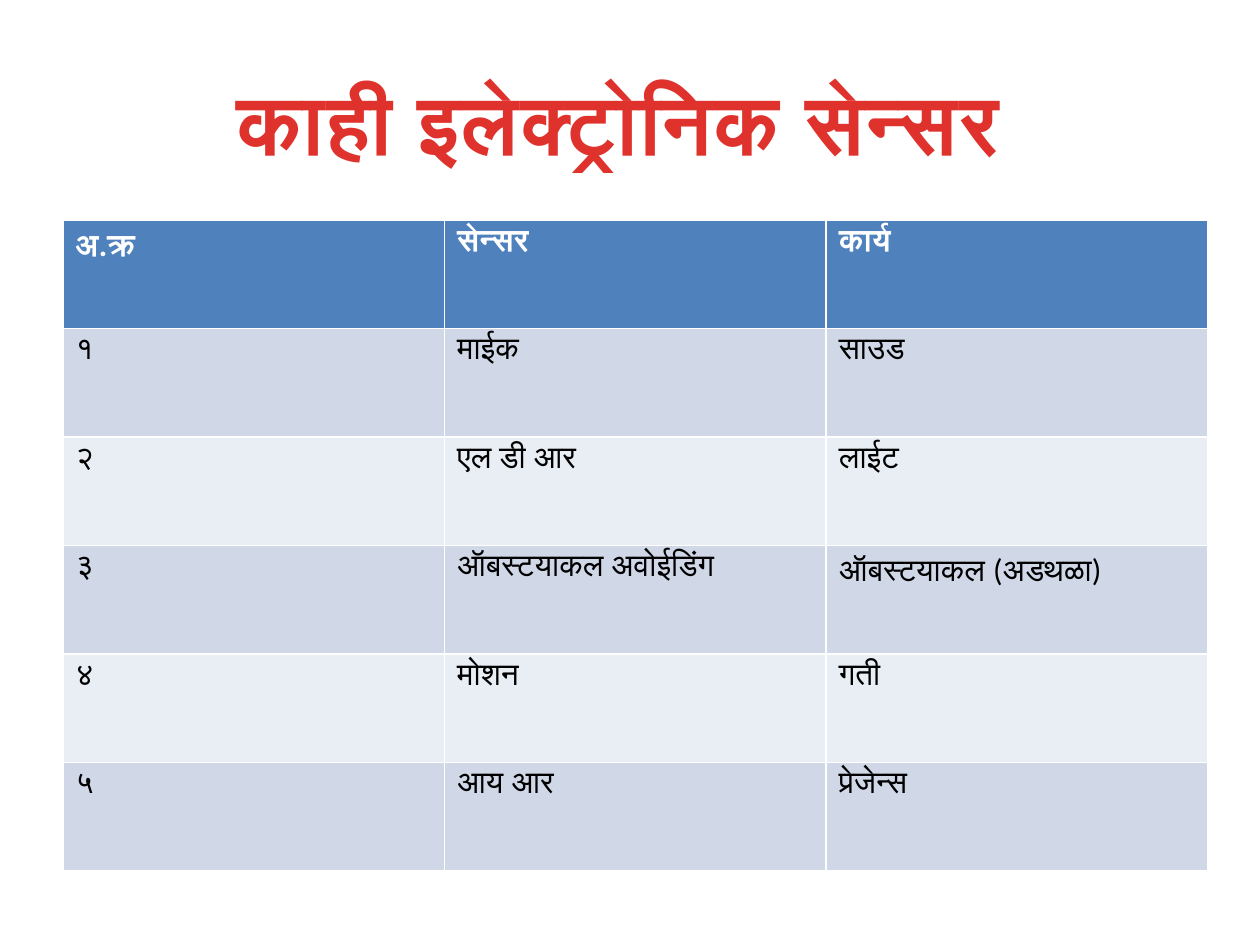
from pptx import Presentation
from pptx.dml.color import RGBColor
from pptx.enum.text import MSO_ANCHOR, PP_ALIGN
from pptx.util import Pt

SCALE = 914400 / 126
MIDDLE = MSO_ANCHOR.MIDDLE
CENTER = PP_ALIGN.CENTER

RED = RGBColor(0xE0, 0x32, 0x2D)
WHITE = RGBColor(0xFF, 0xFF, 0xFF)
BLACK = RGBColor(0x00, 0x00, 0x00)
BLUE = RGBColor(0x4F, 0x81, 0xBD)
BANDS = [RGBColor(0xD0, 0xD8, 0xE8), RGBColor(0xE9, 0xED, 0xF4)]

TITLE = {"name": "Arial", "size": Pt(48), "bold": True}
HEAD = {"name": "Calibri", "size": Pt(18), "bold": True}
BODY = {"name": "Calibri", "size": Pt(18), "bold": False}

ROWS = [
    ("अ.क्र", "सेन्सर", "कार्य"),
    ("१", "माईक", "साउड"),
    ("२", "एल डी आर", "लाईट"),
    ("३", "ऑबस्टयाकल अवोईडिंग", "ऑबस्टयाकल (अडथळा)"),
    ("४", "मोशन", "गती"),
    ("५", "आय आर", "प्रेजेन्स"),
]


def px(*sizes):
    """Turn px lengths into EMU."""
    return [round(size * SCALE) for size in sizes]


def write(para, text, look, color):
    run = para.add_run()
    run.text = text
    for key, value in look.items():
        setattr(run.font, key, value)
    run.font.color.rgb = color
    return run


def add_title(slide, text, box):
    frame = slide.shapes.add_textbox(*px(*box)).text_frame
    frame.word_wrap = True
    frame.vertical_anchor = MIDDLE
    para = frame.paragraphs[0]
    para.alignment = CENTER
    run = write(para, text, TITLE, RED)
    run.font._element.set("spc", "50")


def add_grid(slide, rows, box):
    """Add a table with a header row and two-tone bands below it."""
    shape = slide.shapes.add_table(len(rows), len(rows[0]), *px(*box))
    for i, row in enumerate(rows):
        if i == 0:
            look, color, fill = HEAD, WHITE, BLUE
        else:
            look, color, fill = BODY, BLACK, BANDS[(i - 1) % 2]
        for j, text in enumerate(row):
            cell = shape.table.cell(i, j)
            cell.fill.solid()
            cell.fill.fore_color.rgb = fill
            write(cell.text_frame.paragraphs[0], text, look, color)


def main():
    prs = Presentation()
    prs.slide_width, prs.slide_height = px(1260, 945)
    slide = prs.slides.add_slide(prs.slide_layouts[6])
    add_title(slide, "काही इलेक्ट्रोनिक सेन्सर ", (63, 42, 1134, 157))
    add_grid(slide, ROWS, (63, 220, 1145, 651))
    prs.save("out.pptx")


if __name__ == "__main__":
    main()
